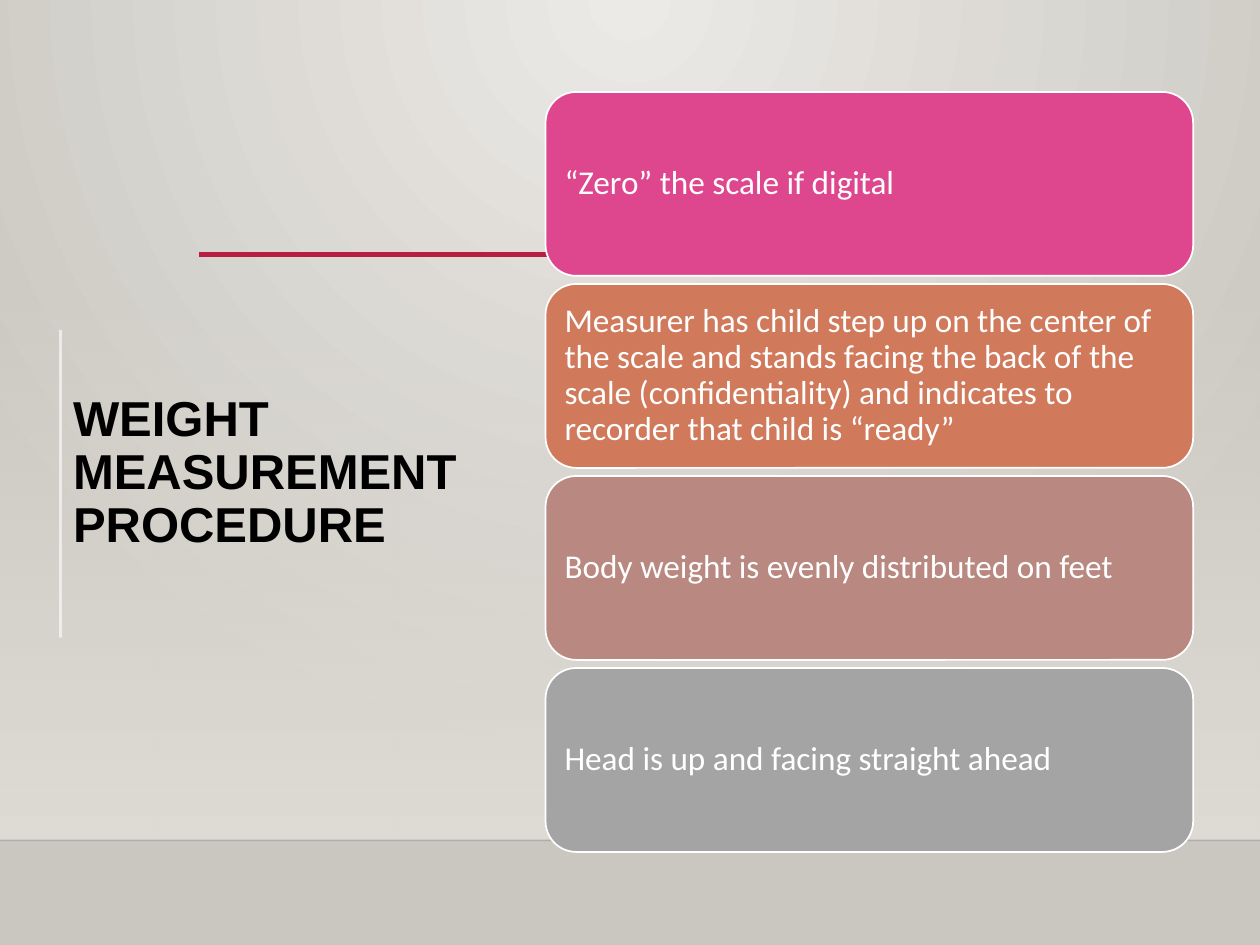
"""Build the weight measurement procedure slide with four stacked step cards."""
from pptx import Presentation
from pptx.dml.color import RGBColor
from pptx.enum.shapes import MSO_CONNECTOR, MSO_SHAPE
from pptx.enum.text import MSO_ANCHOR, MSO_AUTO_SIZE, PP_ALIGN
from pptx.oxml import parse_xml
from pptx.oxml.ns import nsdecls, qn
from pptx.util import Inches, Pt


def color(hex_value):
    return RGBColor.from_string(hex_value)


def gradient(old_fill, stops, direction):
    stop_xml = "".join(
        f'<a:gs pos="{position}"><a:srgbClr val="{shade}"><a:alpha val="{alpha}"/></a:srgbClr></a:gs>'
        for position, shade, alpha in stops
    )
    new_fill = parse_xml(
        f'<a:gradFill {nsdecls("a")} rotWithShape="1"><a:gsLst>{stop_xml}</a:gsLst>{direction}</a:gradFill>'
    )
    old_fill.getparent().replace(old_fill, new_fill)


deck = Presentation()
deck.slide_width, deck.slide_height = Inches(10), Inches(7.5)
page = deck.slides.add_slide(deck.slide_layouts[5])

page.background.fill.solid()
gradient(
    page._element.find(".//" + qn("p:bgPr")).find(qn("a:solidFill")),
    [(0, "ECEAE7", 100000), (100000, "CAC7C1", 100000)],
    '<a:path path="circle"><a:fillToRect l="43000" t="0" r="43000" b="100000"/></a:path>',
)

floor_top = Inches(6.67)
wall_top = Inches(2.2)
wall = page.shapes.add_shape(MSO_SHAPE.RECTANGLE, 0, wall_top, deck.slide_width, floor_top - wall_top)
wall.shadow.inherit = False
wall.line.fill.background()
wall.fill.solid()
gradient(
    wall._element.spPr.find(qn("a:solidFill")),
    [(0, "DFDBD5", 0), (100000, "DFDBD5", 100000)],
    '<a:lin ang="5400000" scaled="0"/>',
)

rules = [
    ((0, 6.67), (10, 6.67), "000001", 1, 20),
    ((1.58, 2.02), (8.77, 2.02), "B71E42", 2.5, 100),
    ((0.48, 2.62), (0.48, 5.06), "FFFFFF", 1.5, 60),
]
for start, end, shade, width, opacity in rules:
    rule = page.shapes.add_connector(MSO_CONNECTOR.STRAIGHT, *map(Inches, start + end))
    rule.line.color.rgb = color(shade)
    rule.line.width = Pt(width)
    properties = rule._element.spPr
    properties.append(parse_xml(f'<a:effectLst {nsdecls("a")}/>'))
    properties.find(".//" + qn("a:srgbClr")).append(
        parse_xml(f'<a:alpha {nsdecls("a")} val="{opacity * 1000}"/>')
    )

title = page.shapes.title
page.shapes._spTree.append(title._element)
title.left, title.top, title.width, title.height = map(Inches, (0.48, 0.75, 3.54, 6.02))
title.text_frame.text = "WEIGHT MEASUREMENT\vPROCEDURE"
title_font = {"name": "Arial", "size": Pt(28), "bold": True}
text_blocks = [(title, 0.1, 0.05, title_font, "000000")]

card_left, card_top, card_width, card_height, row_step = 4.33, 0.73, 5.14, 1.46, 1.524
card_font = {"name": "Calibri", "size": Pt(19), "bold": False}
steps = [
    ("“Zero” the scale if digital", "DE478E"),
    ("Measurer has child step up on the center of the scale and stands facing the back of the scale "
     "(confidentiality) and indicates to recorder that child is “ready”", "D07A5B"),
    ("Body weight is evenly distributed on feet", "B88881"),
    ("Head is up and facing straight ahead", "A4A4A4"),
]
for row, (wording, shade) in enumerate(steps):
    place = (card_left, card_top + row * row_step, card_width, card_height)
    card = page.shapes.add_shape(MSO_SHAPE.ROUNDED_RECTANGLE, *map(Inches, place))
    card.shadow.inherit = False
    card.adjustments[0] = 0.167
    card.fill.solid()
    card.fill.fore_color.rgb = color(shade)
    card.line.color.rgb = color("FFFFFF")
    card.line.width = Pt(1)
    card.text_frame.text = wording
    text_blocks.append((card, 0.08, 0.08, card_font, "FFFFFF"))

for box, side, edge, font_values, shade in text_blocks:
    frame_values = {
        "word_wrap": True,
        "auto_size": MSO_AUTO_SIZE.NONE,
        "vertical_anchor": MSO_ANCHOR.MIDDLE,
        "margin_left": Inches(side),
        "margin_right": Inches(side),
        "margin_top": Inches(edge),
        "margin_bottom": Inches(edge),
    }
    for name, value in frame_values.items():
        setattr(box.text_frame, name, value)
    para = box.text_frame.paragraphs[0]
    para.alignment = PP_ALIGN.LEFT
    para.line_spacing = 0.9
    para.space_before = Pt(0)
    for span in para.runs:
        for name, value in font_values.items():
            setattr(span.font, name, value)
        span.font.color.rgb = color(shade)

deck.save("out.pptx")
